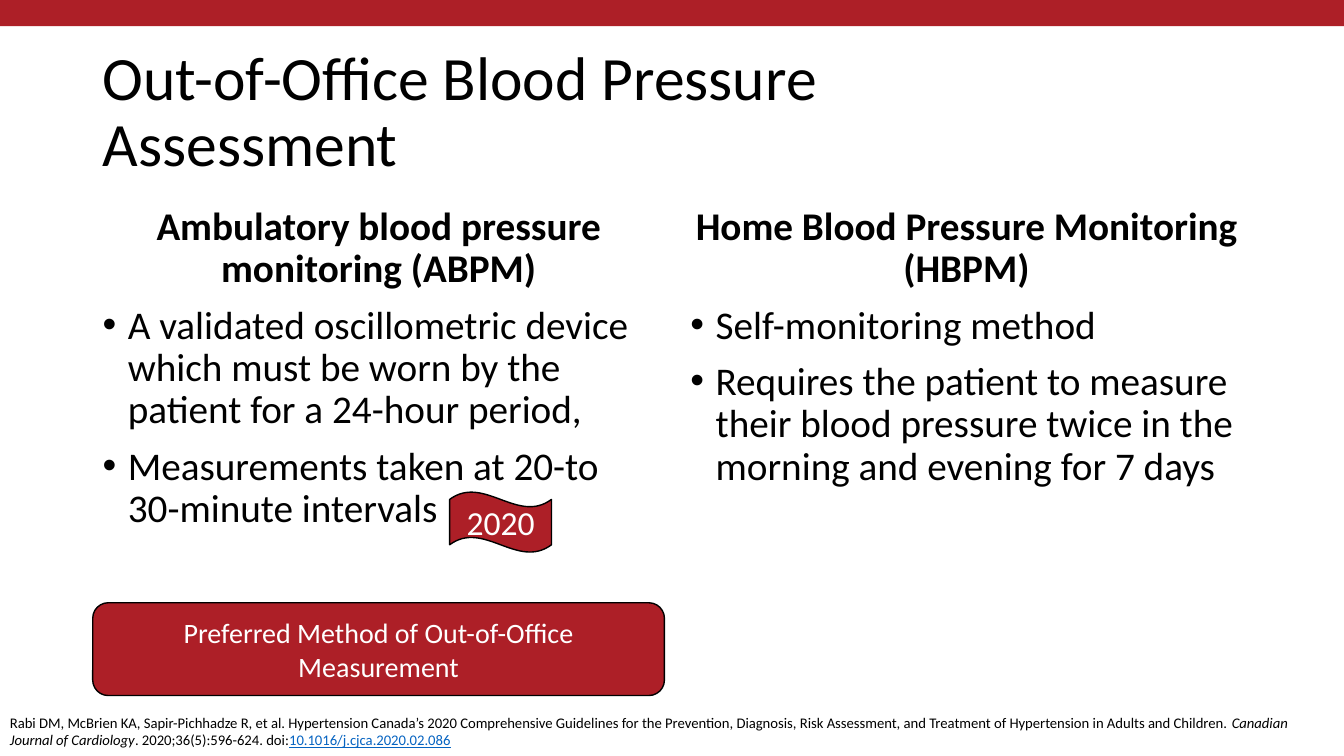
from dataclasses import dataclass

from lxml.etree import SubElement
from pptx import Presentation
from pptx.dml.color import RGBColor
from pptx.enum.shapes import MSO_SHAPE
from pptx.enum.text import MSO_ANCHOR, PP_ALIGN
from pptx.oxml.ns import qn
from pptx.util import Inches, Pt

TITLE = "Out-of-Office Blood Pressure Assessment"
METHODS = [
    ("Ambulatory blood pressure monitoring (ABPM)", [
        "A validated oscillometric device which must be worn by the patient for a 24-hour period,",
        "Measurements taken at 20-to 30-minute intervals",
    ]),
    ("Home Blood Pressure Monitoring (HBPM)", [
        "Self-monitoring method",
        "Requires the patient to measure their blood pressure twice in the morning and evening for 7 days",
    ]),
]
PREFERRED = "Preferred Method of Out-of-Office Measurement"
YEAR = "2020"
CITATION = [
    ("Rabi DM, McBrien KA, Sapir-Pichhadze R, et al. Hypertension Canada’s 2020 "
     "Comprehensive Guidelines for the Prevention, Diagnosis, Risk Assessment, and "
     "Treatment of Hypertension in Adults and Children. ", "plain"),
    ("Canadian Journal of Cardiology", "journal"),
    (". 2020;36(5):596-624. doi:", "plain"),
    ("10.1016/j.cjca.2020.02.086", "doi"),
]


@dataclass(frozen=True)
class Theme:
    font: str = "Calibri"
    red: RGBColor = RGBColor(0xAD, 0x1F, 0x27)
    black: RGBColor = RGBColor(0, 0, 0)
    white: RGBColor = RGBColor(0xFF, 0xFF, 0xFF)
    link: RGBColor = RGBColor(0x05, 0x63, 0xC1)
    title_size: float = 44
    body_size: float = 28
    year_size: float = 24
    preferred_size: float = 20
    citation_size: float = 10.5


THEME = Theme()
SLIDE_W, SLIDE_H = 13.33, 7.5
MARGIN = 0.92
COLUMN_W, COLUMN_GAP = 5.67, 0.16
COLUMN_TOP, COLUMN_H = 2, 4.76


def style(paragraph, size, color, bold=False):
    font = paragraph.font
    font.name, font.size, font.bold = THEME.font, Pt(size), bold
    font.color.rgb = color


def add_text_frame(slide, left, top, width, height):
    box = slide.shapes.add_textbox(Inches(left), Inches(top), Inches(width), Inches(height))
    box.text_frame.word_wrap = True
    return box.text_frame


def add_bullet(paragraph):
    properties = paragraph._p.get_or_add_pPr()
    properties.set("marL", str(Inches(0.25)))
    properties.set("indent", str(-Inches(0.25)))
    SubElement(properties, qn("a:buFont"), typeface="Arial")
    SubElement(properties, qn("a:buChar"), char="•")


def add_red_shape(slide, preset, left, top, width, height, label="", size=18):
    """Add a red shape; one with a label is also outlined in black."""
    shape = slide.shapes.add_shape(preset, Inches(left), Inches(top), Inches(width), Inches(height))
    shape.shadow.inherit = False
    shape.fill.solid()
    shape.fill.fore_color.rgb = THEME.red
    if not label:
        shape.line.fill.background()
        return
    shape.line.color.rgb = THEME.black
    shape.line.width = Pt(1)
    frame = shape.text_frame
    frame.word_wrap = True
    frame.vertical_anchor = MSO_ANCHOR.MIDDLE
    paragraph = frame.paragraphs[0]
    paragraph.text = label
    paragraph.alignment = PP_ALIGN.CENTER
    style(paragraph, size, THEME.white)


def add_title(slide):
    frame = add_text_frame(slide, MARGIN, 0.4, 10.3, 1.45)
    frame.margin_right = Inches(0.2)
    frame.vertical_anchor = MSO_ANCHOR.MIDDLE
    paragraph = frame.paragraphs[0]
    paragraph.text = TITLE
    paragraph.line_spacing = 0.9
    style(paragraph, THEME.title_size, THEME.black)


def add_method(slide, left, heading, points):
    frame = add_text_frame(slide, left, COLUMN_TOP, COLUMN_W, COLUMN_H)
    paragraph = frame.paragraphs[0]
    paragraph.text = heading
    paragraph.alignment = PP_ALIGN.CENTER
    paragraph.line_spacing = 0.9
    style(paragraph, THEME.body_size, THEME.black, bold=True)
    for point in points:
        paragraph = frame.add_paragraph()
        paragraph.text = point
        paragraph.line_spacing = 0.9
        paragraph.space_before = Pt(10)
        add_bullet(paragraph)
        style(paragraph, THEME.body_size, THEME.black)


def add_citation(slide):
    paragraph = add_text_frame(slide, 0, 7.03, SLIDE_W, 0.47).paragraphs[0]
    for words, role in CITATION:
        run = paragraph.add_run()
        run.text = words
        font = run.font
        font.name, font.size = THEME.font, Pt(THEME.citation_size)
        font.color.rgb = THEME.link if role == "doi" else THEME.black
        font.italic = role == "journal"
        font.underline = role == "doi"


def main():
    deck = Presentation()
    deck.slide_width, deck.slide_height = Inches(SLIDE_W), Inches(SLIDE_H)
    slide = deck.slides.add_slide(deck.slide_layouts[6])
    add_red_shape(slide, MSO_SHAPE.RECTANGLE, 0, -0.08, SLIDE_W, 0.34)
    add_title(slide)
    for column, (heading, points) in enumerate(METHODS):
        add_method(slide, MARGIN + column * (COLUMN_W + COLUMN_GAP), heading, points)
    add_red_shape(slide, MSO_SHAPE.ROUNDED_RECTANGLE, MARGIN, 5.98, COLUMN_W, 0.92,
                  PREFERRED, THEME.preferred_size)
    add_citation(slide)
    add_red_shape(slide, MSO_SHAPE.WAVE, 4.46, 4.88, 1.01, 0.6, YEAR, THEME.year_size)
    deck.save("out.pptx")


if __name__ == "__main__":
    main()
